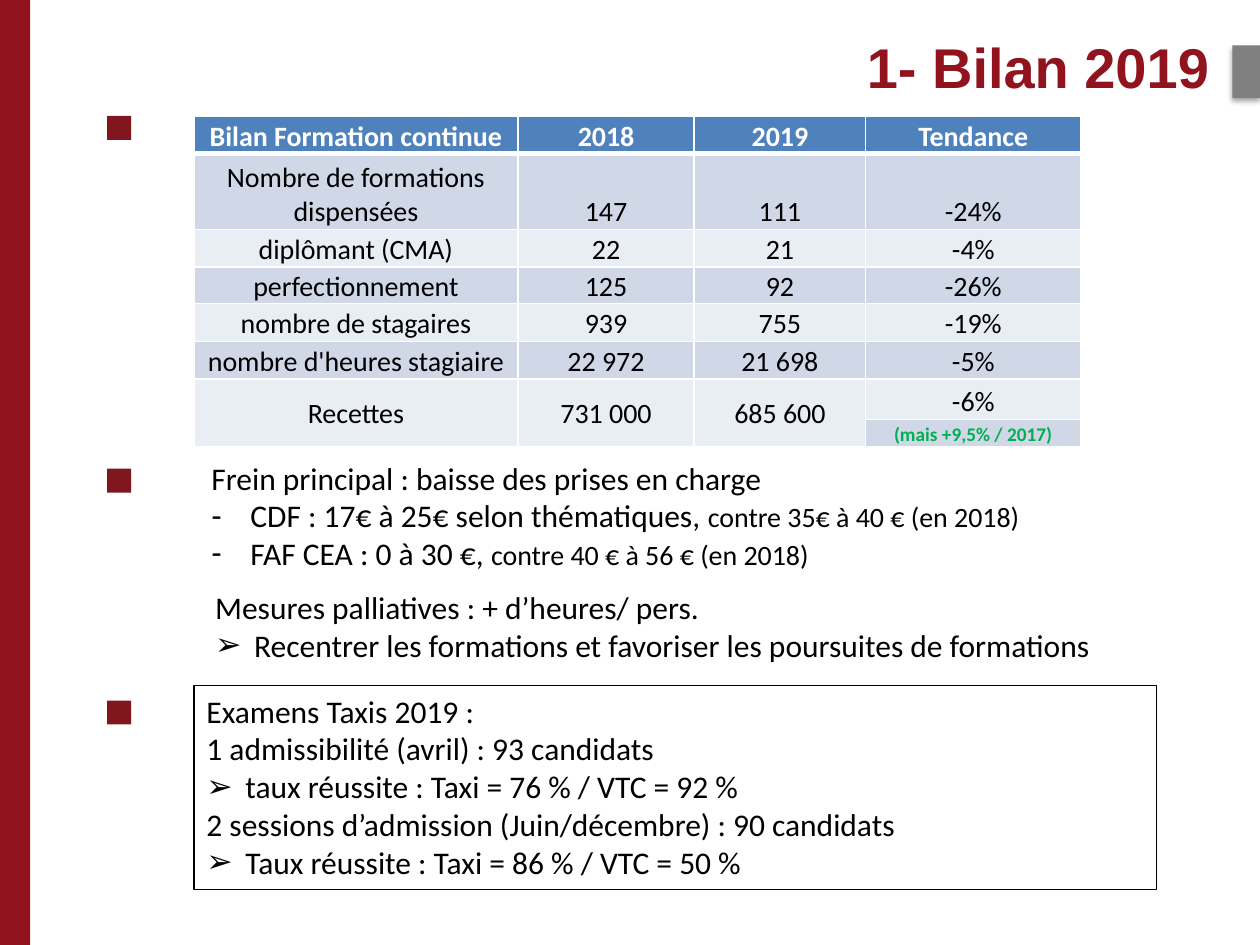
from lxml import etree
from pptx import Presentation
from pptx.dml.color import RGBColor
from pptx.enum.shapes import MSO_SHAPE as SHAPE
from pptx.enum.text import MSO_ANCHOR as ANCHOR, PP_ALIGN as ALIGN
from pptx.oxml import parse_xml
from pptx.oxml.ns import nsdecls, qn
from pptx.util import Inches, Pt

RED, MARK, GREY = "91131E", "81171E", "808080"
BLACK, WHITE, GREEN = "000000", "FFFFFF", "00B050"
HEAD, BANDS = "4F81BD", ("D0D8E8", "E9EDF4")
DASH, ARROW = "-", "➢"

COLS = [2.57, 1.4, 1.36, 1.71]
ROWS = [0.3, 0.6, 0.3, 0.29, 0.3, 0.3, 0.32, 0.22]
RESULTS = [
    ["Bilan Formation continue", "2018", "2019", "Tendance"],
    ["Nombre de formations dispensées", "147", "111", "-24%"],
    ["diplômant (CMA)", "22", "21", "-4%"],
    ["perfectionnement", "125", "92", "-26%"],
    ["nombre de stagaires", "939", "755", "-19%"],
    ["nombre d'heures stagiaire", "22 972", "21 698", "-5%"],
    ["Recettes", "731 000", "685 600", "-6%"],
    ["", "", "", "(mais +9,5% / 2017)"],
]

# Each paragraph: bullet or None, main text, optional smaller ending
OBSTACLES = [
    (None, "Frein principal : baisse des prises en charge"),
    (DASH, "CDF : 17€ à 25€ selon thématiques, ", "contre 35€ à 40 € (en 2018)"),
    (DASH, "FAF CEA : 0 à 30 €, ", "contre 40 € à 56 € (en 2018)"),
]
MEASURES = [
    (None, "Mesures palliatives : + d’heures/ pers."),
    (ARROW, "Recentrer les formations et favoriser les poursuites de formations"),
]
EXAMS = [
    (None, "Examens Taxis 2019 :"),
    (None, "1 admissibilité (avril) : 93 candidats"),
    (ARROW, "taux réussite : Taxi = 76 % / VTC = 92 %"),
    (None, "2 sessions d’admission (Juin/décembre) : 90 candidats"),
    (ARROW, "Taux réussite : Taxi = 86 % / VTC = 50 %"),
]


def rgb(color):
    return RGBColor.from_string(color)


def add_run(p, text, size, color=BLACK, bold=False, name="Calibri"):
    r = p.add_run()
    r.text = text
    for key, value in dict(size=Pt(size), bold=bold, name=name).items():
        setattr(r.font, key, value)
    r.font.color.rgb = rgb(color)


def add_block(s, x, y, w, h, color):
    sp = s.shapes.add_shape(SHAPE.RECTANGLE, Inches(x), Inches(y), Inches(w), Inches(h))
    sp.shadow.inherit = False
    sp.fill.solid()
    sp.fill.fore_color.rgb = rgb(color)
    sp.line.fill.background()
    return sp


def add_tab(s, x, y, w, h):
    """Grey tab on the right edge, with a soft shadow below it."""
    sp = add_block(s, x, y, w, h, GREY)
    effects = sp._element.spPr.find(qn("a:effectLst"))
    effects.append(parse_xml(
        f'<a:outerShdw {nsdecls("a")} blurRad="{Pt(3.1)}" dist="{Pt(1.8)}" dir="5400000"'
        ' rotWithShape="0"><a:srgbClr val="000000"><a:alpha val="35000"/></a:srgbClr>'
        "</a:outerShdw>"))


def set_title(s, x, y, w, h, text):
    title = s.shapes.title
    title.left, title.top, title.width, title.height = map(Inches, (x, y, w, h))
    tf = title.text_frame
    tf.vertical_anchor = ANCHOR.TOP
    p = tf.paragraphs[0]
    p.alignment = ALIGN.RIGHT
    add_run(p, text, 32, RED, True, "Arial")


def set_bullet(p, char):
    pPr = p._p.get_or_add_pPr()
    pPr.set("marL", str(Inches(0.31)))
    pPr.set("indent", str(Inches(-0.31)))
    etree.SubElement(pPr, qn("a:buFont")).set("typeface", "Arial")
    etree.SubElement(pPr, qn("a:buChar")).set("char", char)


def add_notes(s, x, y, w, h, lines, framed=False):
    """Text block whose lines may carry a bullet and a smaller ending."""
    box = s.shapes.add_textbox(Inches(x), Inches(y), Inches(w), Inches(h))
    if framed:
        box.line.color.rgb = rgb(BLACK)
        box.line.width = Pt(0.75)
    tf = box.text_frame
    tf.word_wrap = True
    for i, (bullet, *texts) in enumerate(lines):
        p = tf.add_paragraph() if i else tf.paragraphs[0]
        if bullet:
            set_bullet(p, bullet)
        for text, size in zip(texts, (18, 16)):
            add_run(p, text, size)


def set_borders(cell, bottom):
    tcPr = cell._tc.get_or_add_tcPr()
    for side, width in dict(L=1, R=1, T=1, B=bottom).items():
        tcPr.append(parse_xml(
            f'<a:ln{side} {nsdecls("a")} w="{Pt(width)}"><a:solidFill>'
            f'<a:srgbClr val="{WHITE}"/></a:solidFill></a:ln{side}>'))


def add_results(s, x, y):
    frame = s.shapes.add_table(len(ROWS), len(COLS), Inches(x), Inches(y),
                               Inches(sum(COLS)), Inches(sum(ROWS)))
    table = frame.table
    for col, width in zip(table.columns, COLS):
        col.width = Inches(width)
    for row, height in zip(table.rows, ROWS):
        row.height = Inches(height)
    last = len(ROWS) - 1
    for c in range(3):
        table.cell(last - 1, c).merge(table.cell(last, c))
    for r, values in enumerate(RESULTS):
        for c, text in enumerate(values):
            cell = table.cell(r, c)
            set_borders(cell, 1 if r else 3)
            cell.fill.solid()
            cell.fill.fore_color.rgb = rgb(BANDS[(r - 1) % 2] if r else HEAD)
            for side, inset in dict(left=0.01, right=0.01, top=0.01, bottom=0).items():
                setattr(cell, f"margin_{side}", Inches(inset))
            cell.vertical_anchor = ANCHOR.MIDDLE if cell.is_merge_origin else ANCHOR.BOTTOM
            if not text:
                continue
            p = cell.text_frame.paragraphs[0]
            p.alignment = ALIGN.CENTER
            if r == 0:
                add_run(p, text, 16, WHITE, True)
            elif r == last:
                add_run(p, text, 11, GREEN, True)
            else:
                add_run(p, text, 16)


def main():
    prs = Presentation()
    prs.slide_width, prs.slide_height = Inches(10), Inches(7.5)
    s = prs.slides.add_slide(prs.slide_layouts[5])
    add_block(s, 0, 0, 0.24, 7.5, RED)
    set_title(s, 1.01, 0.21, 8.69, 1.18, "1- Bilan 2019")
    add_tab(s, 9.78, 0.36, 0.22, 0.42)
    for y in (0.92, 3.72, 5.56):
        add_block(s, 0.85, y, 0.19, 0.19, MARK)
    add_results(s, 1.54, 0.92)
    add_notes(s, 1.58, 3.59, 8.07, 1.01, OBSTACLES)
    add_notes(s, 1.61, 4.62, 7.64, 0.71, MEASURES)
    add_notes(s, 1.54, 5.44, 7.64, 1.62, EXAMS, framed=True)
    prs.save("out.pptx")


if __name__ == "__main__":
    main()
